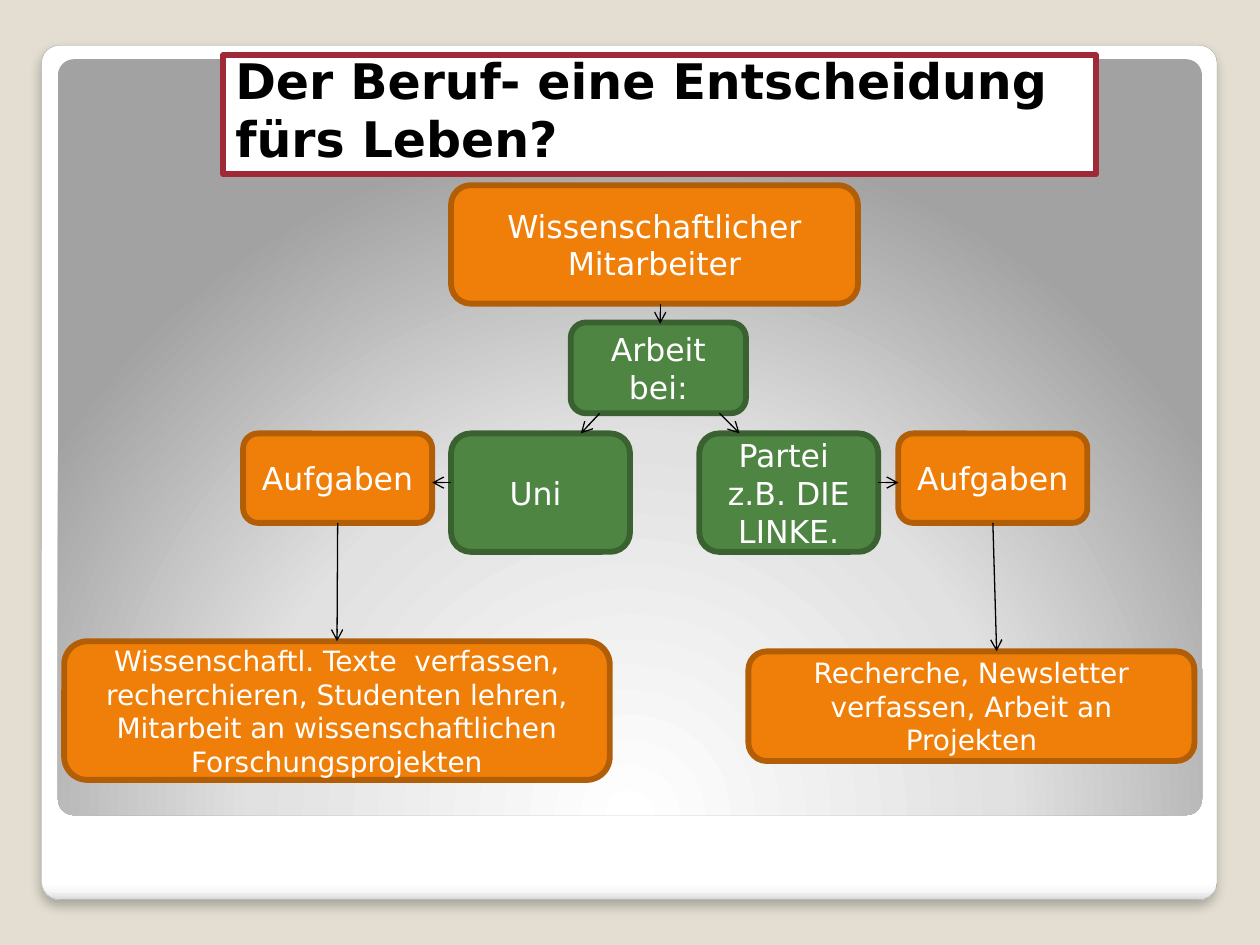
from dataclasses import dataclass

from lxml.etree import SubElement
from pptx import Presentation
from pptx.dml.color import RGBColor
from pptx.enum.shapes import MSO_CONNECTOR, MSO_SHAPE
from pptx.enum.text import MSO_ANCHOR, PP_ALIGN
from pptx.oxml import parse_xml
from pptx.oxml.ns import qn
from pptx.util import Inches, Pt

NS = 'xmlns:a="http://schemas.openxmlformats.org/drawingml/2006/main"'


@dataclass(frozen=True)
class Theme:
    font: str = "DejaVu Sans"
    title_size: int = 28
    node_size: int = 18
    task_size: int = 16
    border: float = 3.35
    arrow: float = 0.75
    back: str = "E3DED1"
    white: str = "FFFFFF"
    black: str = "000000"
    red: str = "9F2936"
    frame: str = "A4A4A4"
    orange: tuple = ("F07F09", "B25E07")
    green: tuple = ("4E8542", "3A6231")
    card_stops: tuple = ((0, "FFFFFF"), (98, "FFFFFF"), (99, "F7F7F7"), (100, "DADADA"))
    panel_stops: tuple = ((0, "FFFFFF"), (55, "E1E1E1"), (100, "A2A2A2"))


T = Theme()


def add_box(shape_type, at, fill, line, paragraphs=(), size=T.node_size,
            color=T.white, bold=False, align=PP_ALIGN.CENTER, anchor=MSO_ANCHOR.MIDDLE):
    """Add a filled, outlined shape with one text run per paragraph."""
    sp = s.shapes.add_shape(shape_type, *map(Inches, at))
    sp.shadow.inherit = False
    sp.fill.solid()
    sp.fill.fore_color.rgb = RGBColor.from_string(fill)
    sp.line.color.rgb = RGBColor.from_string(line)
    sp.line.width = Pt(T.border)
    tf = sp.text_frame
    tf.word_wrap = True
    tf.vertical_anchor = anchor
    for i, text in enumerate(paragraphs):
        p = tf.paragraphs[0] if i == 0 else tf.add_paragraph()
        p.alignment = align
        r = p.add_run()
        r.text = text
        for name, value in {"name": T.font, "size": Pt(size), "bold": bold}.items():
            setattr(r.font, name, value)
        r.font.color.rgb = RGBColor.from_string(color)
    return sp


def set_gradient(sp, stops, direction):
    """Replace a solid fill by a gradient with the given direction XML."""
    gs = "".join(f'<a:gs pos="{pos * 1000}"><a:srgbClr val="{c}"/></a:gs>' for pos, c in stops)
    solid = sp._element.spPr.find(qn("a:solidFill"))
    solid.getparent().replace(solid, parse_xml(
        f'<a:gradFill {NS} rotWithShape="1"><a:gsLst>{gs}</a:gsLst>{direction}</a:gradFill>'))


prs = Presentation()
prs.slide_width, prs.slide_height = Inches(10), Inches(7.5)
s = prs.slides.add_slide(prs.slide_layouts[6])
s.background.fill.solid()
s.background.fill.fore_color.rgb = RGBColor.from_string(T.back)

# Card and grey panel
card = add_box(MSO_SHAPE.ROUNDED_RECTANGLE, (0.33, 0.36, 9.33, 6.78), T.white, T.frame)
card.line.width = Pt(0.16)
set_gradient(card, T.card_stops, '<a:lin ang="5400000" scaled="0"/>')
effects = card._element.spPr.find(qn("a:effectLst"))
effects.append(parse_xml(
    f'<a:outerShdw {NS} blurRad="{Pt(6)}" dist="{Pt(4)}" dir="5400000" algn="t" rotWithShape="0">'
    f'<a:srgbClr val="{T.black}"><a:alpha val="25000"/></a:srgbClr></a:outerShdw>'))

panel = add_box(MSO_SHAPE.ROUNDED_RECTANGLE, (0.46, 0.47, 9.08, 6), T.white, T.white)
panel.line.fill.background()
set_gradient(panel, T.panel_stops, '<a:path path="circle">'
             '<a:fillToRect l="50000" t="175000" r="50000" b="-75000"/></a:path>')
for sp in (card, panel):
    sp.adjustments[0] = 0.021

# Boxes of the diagram
nodes = {
    "job": ((3.58, 1.47, 3.23, 0.94), T.orange, ["Wissenschaftlicher Mitarbeiter"], T.node_size),
    "work": ((4.53, 2.56, 1.39, 0.72), T.green, ["Arbeit bei:"], T.node_size),
    "uni_tasks": ((0.51, 5.09, 4.33, 1.1), T.orange,
                  ["Wissenschaftl. Texte  verfassen, recherchieren, Studenten lehren, "
                   "Mitarbeit an wissenschaftlichen Forschungsprojekten"], T.task_size),
    "uni": ((3.58, 3.44, 1.42, 0.94), T.green, ["Uni "], T.node_size),
    "party": ((5.55, 3.44, 1.42, 0.94), T.green, ["Partei ", "z.B. DIE LINKE."], T.node_size),
    "party_duties": ((7.13, 3.44, 1.5, 0.71), T.orange, ["Aufgaben"], T.node_size),
    "uni_duties": ((1.93, 3.44, 1.5, 0.71), T.orange, ["Aufgaben"], T.node_size),
    "party_tasks": ((5.94, 5.17, 3.54, 0.87), T.orange,
                    ["Recherche, Newsletter verfassen, Arbeit an Projekten"], T.task_size),
}
boxes = {name: add_box(MSO_SHAPE.ROUNDED_RECTANGLE, at, *colors, text, size)
         for name, (at, colors, text, size) in nodes.items()}

add_box(MSO_SHAPE.RECTANGLE, (1.77, 0.44, 6.93, 0.94), T.white, T.red,
        ["Der Beruf- eine Entscheidung fürs Leben?"], T.title_size, T.black, True,
        PP_ALIGN.LEFT, MSO_ANCHOR.BOTTOM)

# Arrows: start, end, box joined at its bottom, box joined at its top
arrows = [
    ((5.24, 2.41), (5.24, 2.57), None, None),
    ((4.76, 3.28), (4.61, 3.44), None, None),
    ((5.71, 3.28), (5.87, 3.44), None, None),
    ((3.58, 3.83), (3.43, 3.83), None, None),
    ((6.97, 3.83), (7.13, 3.83), None, None),
    ((2.68, 4.14), (2.68, 5.09), "uni_duties", "uni_tasks"),
    ((7.87, 4.14), (7.91, 5.17), "party_duties", None),
]
for start, end, source, target in arrows:
    c = s.shapes.add_connector(MSO_CONNECTOR.STRAIGHT, *map(Inches, start + end))
    if source:
        c.begin_connect(boxes[source], 2)
    if target:
        c.end_connect(boxes[target], 0)
    c.line.color.rgb = RGBColor.from_string(T.black)
    c.line.width = Pt(T.arrow)
    SubElement(c.line._get_or_add_ln(), qn("a:tailEnd"), type="arrow")
    SubElement(c._element.spPr, qn("a:effectLst"))

prs.save("out.pptx")
